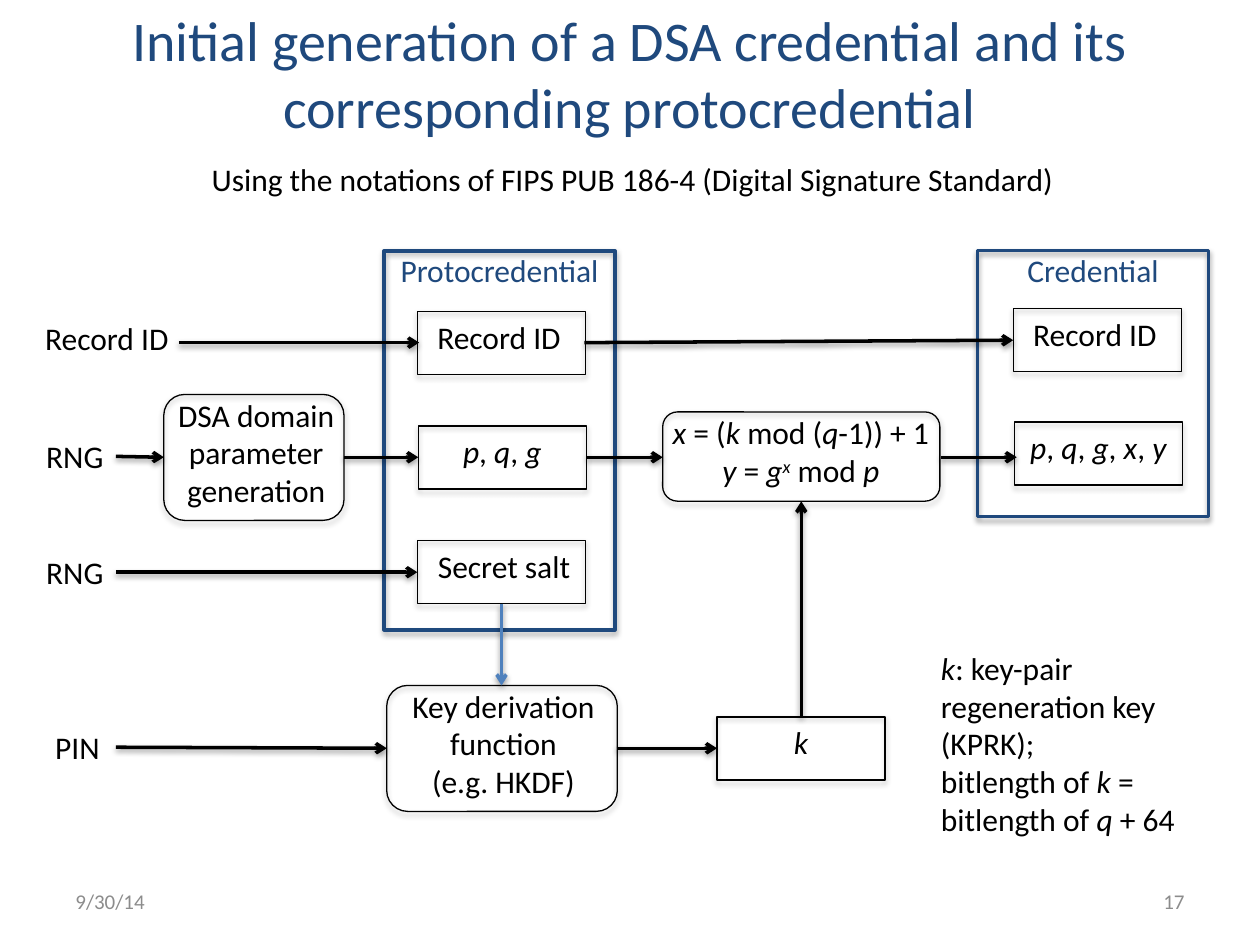
"""Builds a slide on the first making of a DSA credential and its protocredential."""
import pptx
import pptx.dml.color
import pptx.enum.shapes
import pptx.enum.text
import pptx.oxml
import pptx.oxml.ns
import pptx.util

Pt = pptx.util.Pt
RGB = pptx.dml.color.RGBColor
KIND = pptx.enum.shapes.MSO_SHAPE
ALIGN = pptx.enum.text.PP_ALIGN
FIT = pptx.enum.text.MSO_AUTO_SIZE
MID = pptx.enum.text.MSO_ANCHOR.MIDDLE
qn = pptx.oxml.ns.qn
NS = pptx.oxml.ns.nsdecls("a")

BLACK = RGB(0x00, 0x00, 0x00)
NAVY = RGB(0x1F, 0x49, 0x7D)
BLUE = RGB(0x4F, 0x81, 0xBD)
GRAY = RGB(0x8C, 0x8C, 0x8C)
LEFT, MIDST, RIGHT = ALIGN.LEFT, ALIGN.CENTER, ALIGN.RIGHT


class Deck:
    """Holds the style and the current slide, and draws each kind of element."""

    def __init__(self, wide, high):
        self.file = pptx.Presentation()
        self.file.slide_width, self.file.slide_height = Pt(wide), Pt(high)
        self.slide = self.file.slides.add_slide(self.file.slide_layouts[6])
        self.font = {"name": "Calibri", "size": Pt(18)}

    def put(self, thing, form):
        for key, value in form.items():
            setattr(thing, key, value)

    def shade(self, shape, alpha, dist):
        shape._element.spPr.append(pptx.oxml.parse_xml(
            f'<a:effectLst {NS}><a:outerShdw blurRad="40000" dist="{dist}" '
            f'dir="5400000" rotWithShape="0"><a:srgbClr val="000000">'
            f'<a:alpha val="{alpha}"/></a:srgbClr></a:outerShdw></a:effectLst>'))

    def text(self, spot, lines, align=LEFT, color=BLACK, size=18, frame=None):
        """Write lines, where *...* is slanted and *^...* is also raised."""
        body = self.slide.shapes.add_textbox(*map(Pt, spot)).text_frame
        self.put(body, {"word_wrap": True,
                        **(frame or {"auto_size": FIT.SHAPE_TO_FIT_TEXT})})
        form = {**self.font, "size": Pt(size)}
        for row, line in enumerate(lines.split("\n")):
            para = body.add_paragraph() if row else body.paragraphs[0]
            para.alignment = align
            for turn, part in enumerate(line.split("*")):
                if not part:
                    continue
                run = para.add_run()
                run.text = part.lstrip("^")
                self.put(run.font, {**form, "italic": turn % 2 == 1})
                run.font.color.rgb = color
                if part.startswith("^"):
                    run.font._element.set("baseline", "30000")

    def box(self, spot, kind=KIND.RECTANGLE, color=BLACK, width=0.75):
        shape = self.slide.shapes.add_shape(kind, *map(Pt, spot))
        shape.fill.background()
        shape.line.color.rgb = color
        shape.line.width = Pt(width)
        self.shade(shape, 35000, 23000)

    def cell(self, x, y, label, shift=0, align=LEFT):
        self.box((x, y, 96, 36))
        self.text((x + shift, y, 96, 29), label, align)

    def step(self, spot, label, inner):
        self.box(spot, KIND.ROUNDED_RECTANGLE)
        self.text(inner, label, MIDST)

    def group(self, x, high, label):
        self.box((x, 143.3, 131.8, high), color=NAVY, width=2)
        self.text((x, 140, 131.8, 29), label, MIDST, NAVY)

    def arrow(self, start, end, color=BLACK):
        link = self.slide.shapes.add_connector(
            pptx.enum.shapes.MSO_CONNECTOR.STRAIGHT, *map(Pt, (*start, *end)))
        link.line.color.rgb = color
        link.line.width = Pt(2)
        link._element.spPr.find(qn("a:ln")).append(
            pptx.oxml.parse_xml(f'<a:tailEnd {NS} type="arrow"/>'))
        self.shade(link, 38000, 20000)


def main():
    deck = Deck(720, 540)
    still = {"vertical_anchor": MID}
    deck.text((36, -3.6, 648, 90), "Initial generation of a DSA credential and its "
              "corresponding protocredential", MIDST, NAVY, 32, still)
    deck.text((36, 500.4, 168, 28.8), "9/30/14", LEFT, GRAY, 12, still)
    deck.text((516, 500.4, 168, 28.8), "17", RIGHT, GRAY, 12, still)
    deck.text((78, 88, 567, 29), "Using the notations of FIPS PUB 186-4 "
              "(Digital Signature Standard)", MIDST)

    deck.group(219.6, 216.7, "Protocredential")
    deck.group(558.7, 152, "Credential")

    for cell in (
        (238.5, 178, "Record ID", 4.3),
        (239, 243.4, "*p*, *q*, *g*", 0, MIDST),
        (238.5, 308.9, "Secret salt", 4.6),
        (579, 176.4, "Record ID", 4.3),
        (579.6, 241.2, "*p*, *q*, *g*, *x*, *y*", 2),
        (409.7, 409.7, "*k*", 0, MIDST),
    ):
        deck.cell(*cell)

    deck.step((93.6, 225.4, 103, 72), "DSA domain parameter generation",
              (91.4, 222.5, 110, 73))
    deck.step((378.7, 235.4, 158.4, 51),
              "*x* = (*k* mod (*q*-1)) + 1\n*y* = *g**^x* mod *p*",
              (366.9, 232.6, 181.5, 51))
    deck.step((221, 391.7, 131.8, 72), "Key derivation function\n(e.g. HKDF)",
              (221.8, 388.8, 131.8, 73))

    deck.text((18.7, 178.6, 96, 29), "Record ID")
    for x, y, name in ((8.6, 246.2, "RNG"), (8.6, 312.5, "RNG"), (6.5, 412.6, "PIN")):
        deck.text((x, y, 57.6, 29), name, RIGHT)

    for start, end in (
        ((102.3, 195.8), (239.5, 195.8)),
        ((334, 195.8), (579, 194.4)),
        ((66.2, 260.8), (93.6, 261.3)),
        ((196.6, 261.3), (239, 261.3)),
        ((335.5, 261.3), (378.7, 261.3)),
        ((537.8, 261.3), (581, 261.3)),
        ((66.2, 327), (238.5, 327)),
        ((66.2, 427), (221, 427.6)),
        ((352.4, 427.6), (409.7, 427.6)),
        ((457.9, 409.7), (457.9, 286.5)),
    ):
        deck.arrow(start, end)
    deck.arrow((286.6, 344.9), (286.6, 391.7), BLUE)

    deck.text((530.6, 367.2, 165, 116.6), "*k*: key-pair\nregeneration key (KPRK);\n"
              "bitlength of *k* = bitlength of *q* + 64")
    deck.file.save("out.pptx")


if __name__ == "__main__":
    main()
